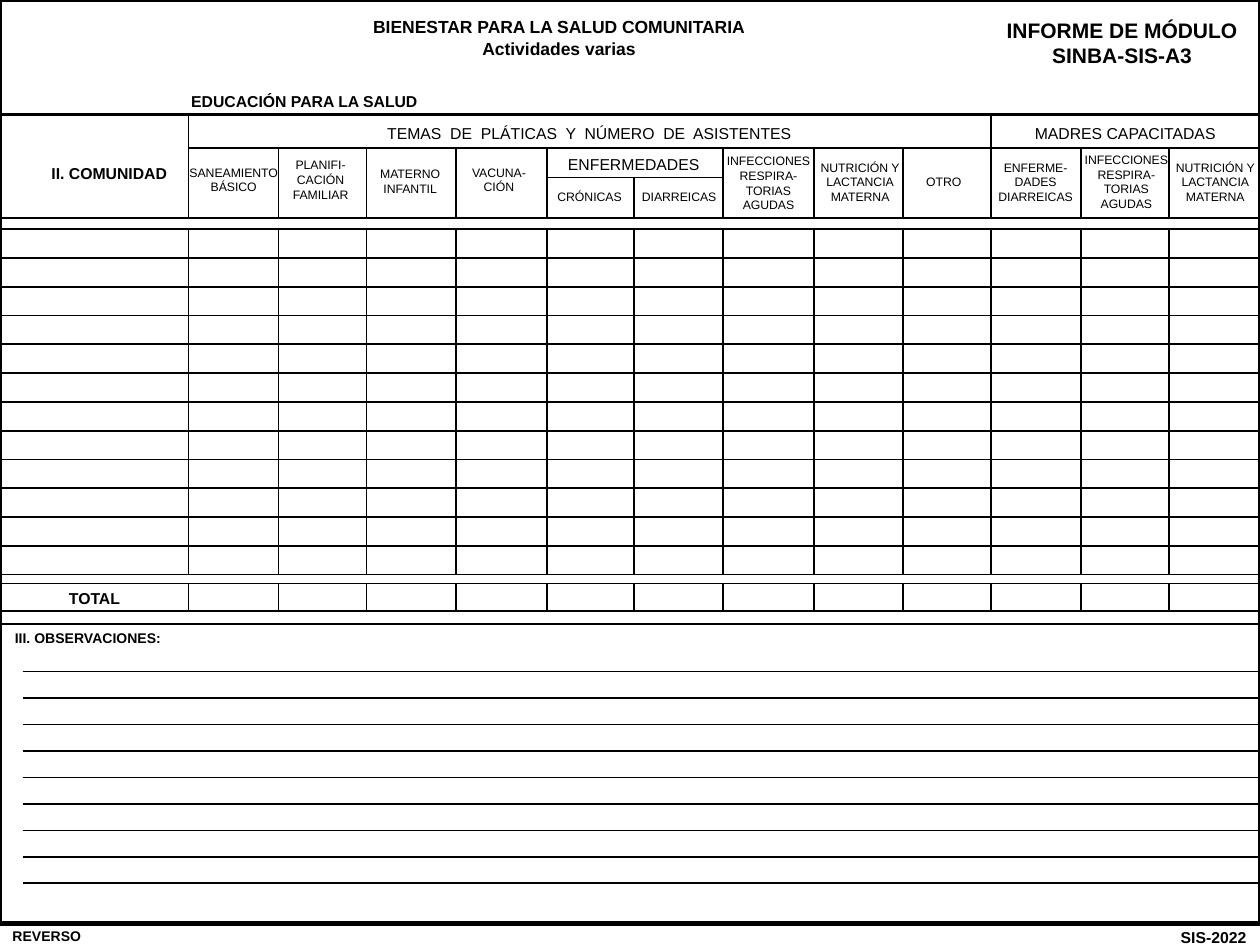
import pptx
import pptx.dml.color
import pptx.enum.shapes
import pptx.enum.text
import pptx.util
from pptx.oxml.ns import qn

Pt = pptx.util.Pt
ALIGN = {
    "l": pptx.enum.text.PP_ALIGN.LEFT,
    "c": pptx.enum.text.PP_ALIGN.CENTER,
    "r": pptx.enum.text.PP_ALIGN.RIGHT,
}


def color(value):
    return pptx.dml.color.RGBColor.from_string(value)


class Form:
    ink = "000000"
    font = "Arial"
    inset = 7.2

    def __init__(self, s):
        self.s = s

    def line(self, x1, y1, x2, y2, width=1):
        sp = self.s.shapes.add_connector(
            pptx.enum.shapes.MSO_CONNECTOR.STRAIGHT, Pt(x1), Pt(y1), Pt(x2), Pt(y2))
        sp.line.width = Pt(width)
        sp.line.color.rgb = color(self.ink)
        sp._element.spPr.append(sp._element.makeelement(qn("a:effectLst"), {}))

    def frame(self, x, y, w, h, width):
        sp = self.s.shapes.add_shape(
            pptx.enum.shapes.MSO_SHAPE.RECTANGLE, Pt(x), Pt(y), Pt(w), Pt(h))
        sp.shadow.inherit = False
        sp.fill.background()
        sp.line.width = Pt(width)
        sp.line.color.rgb = color(self.ink)

    def text(self, x, y, w, text, size, bold=False, align="c", wrap=True, left=inset):
        lines = text.split("\n")
        height = 1.2 * size * len(lines) + 7.2
        sp = self.s.shapes.add_textbox(Pt(x), Pt(y), Pt(w), Pt(height))
        self.fill_text(sp, lines, size, bold, align, wrap, left)

    def title(self, x, y, w, text, size):
        lines = text.split("\n")
        sp = self.s.shapes.title
        sp.left, sp.top, sp.width, sp.height = (
            Pt(v) for v in (x, y, w, 1.2 * size * len(lines) + 7.2))
        self.fill_text(sp, lines, size, True, "c", True, self.inset)

    def fill_text(self, sp, lines, size, bold, align, wrap, left):
        tf = sp.text_frame
        tf.text = "\n".join(lines)
        frame_format = {
            "word_wrap": wrap,
            "auto_size": pptx.enum.text.MSO_AUTO_SIZE.NONE,
            "vertical_anchor": pptx.enum.text.MSO_ANCHOR.TOP,
            "margin_left": Pt(left),
            "margin_right": Pt(self.inset),
            "margin_top": Pt(3.6),
            "margin_bottom": Pt(3.6),
        }
        for name, value in frame_format.items():
            setattr(tf, name, value)
        font_format = {"name": self.font, "size": Pt(size), "bold": bold}
        for p in tf.paragraphs:
            p.alignment = ALIGN[align]
            for r in p.runs:
                for name, value in font_format.items():
                    setattr(r.font, name, value)
                r.font.color.rgb = color(self.ink)


INFECTIONS = "INFECCIONES\nRESPIRA-\nTORIAS\nAGUDAS"
NUTRITION = "NUTRICIÓN Y\nLACTANCIA\nMATERNA"
COLUMN_LABELS = [
    (100.8, 90.7, 65.5, "SANEAMIENTO\nBÁSICO"),
    (159.8, 86.4, 46.8, "PLANIFI-\nCACIÓN\nFAMILIAR"),
    (209.5, 91.4, 49.7, "MATERNO\nINFANTIL"),
    (262.1, 90.7, 46.1, "VACUNA-\nCIÓN"),
    (311, 104.4, 51.8, "CRÓNICAS"),
    (359.3, 104.4, 57.6, "DIARREICAS"),
    (408.2, 84.2, 61.9, INFECTIONS),
    (459.4, 87.8, 64.1, NUTRITION),
    (522, 95.8, 34.6, "OTRO"),
    (563, 87.8, 57.6, "ENFERME-\nDADES\nDIARREICAS"),
    (612.7, 83.5, 61.9, INFECTIONS),
    (662.4, 87.8, 64.1, NUTRITION),
]
COLUMNS = [107.8, 159.1, 209.5, 260.6, 312.5, 362.2,
           413.3, 465.1, 516.2, 566.1, 617.8, 668.2]
COMMUNITY, CHRONIC, DISEASE_END, MOTHERS = (COLUMNS[i] for i in (0, 4, 6, 9))
DISEASE_SPLIT = COLUMNS[5]
WIDTH = 720
HEADER_TOP, TOPICS_BOTTOM, DISEASE_BOTTOM, HEADER_BOTTOM = 65.5, 84.4, 101.5, 124.5
ROWS_TOP, ROWS_BOTTOM, ROW_COUNT = 131, 328.3, 12
TOTAL_TOP, TOTAL_BOTTOM = 333.4, 349.2
NOTES_TOP = 356.4


def main():
    prs = pptx.Presentation()
    prs.slide_width, prs.slide_height = Pt(WIDTH), Pt(540)
    form = Form(prs.slides.add_slide(prs.slide_layouts[5]))

    form.frame(0, 0, WIDTH, 527.8, 2.5)
    form.title(74.2, 5.8, 490.3, "BIENESTAR PARA LA SALUD COMUNITARIA\nActividades varias", 10)
    form.text(556.6, 6.5, 169.2, "INFORME DE MÓDULO\nSINBA-SIS-A3", 12, True)
    form.text(102.2, 49, 146.2, "EDUCACIÓN PARA LA SALUD", 9, True, "l", False)

    form.line(0, HEADER_TOP, WIDTH, HEADER_TOP, 2)
    form.line(COMMUNITY, TOPICS_BOTTOM, WIDTH, TOPICS_BOTTOM)
    form.line(CHRONIC, DISEASE_BOTTOM, DISEASE_END, DISEASE_BOTTOM)
    starts = {COMMUNITY: HEADER_TOP, MOTHERS: HEADER_TOP, DISEASE_SPLIT: DISEASE_BOTTOM}
    for x in COLUMNS:
        form.line(x, starts.get(x, TOPICS_BOTTOM), x, HEADER_BOTTOM)
        form.line(x, ROWS_TOP, x, ROWS_BOTTOM)
        form.line(x, TOTAL_TOP, x, TOTAL_BOTTOM)

    row_height = (ROWS_BOTTOM - ROWS_TOP) / ROW_COUNT
    row_lines = [ROWS_TOP + i * row_height for i in range(ROW_COUNT + 1)]
    for y in [HEADER_BOTTOM, *row_lines, TOTAL_TOP, TOTAL_BOTTOM, NOTES_TOP]:
        form.line(0, y, WIDTH, y)
    for i in range(9):
        y = 383.8 + i * 15.12
        form.line(13, y, 719.3, y)

    form.text(0, 90, 107.3, "II. COMUNIDAD", 9, True, left=24.5)
    form.text(108, 67, 457.2, "TEMAS  DE  PLÁTICAS  Y  NÚMERO  DE  ASISTENTES", 9)
    form.text(565.9, 67, 154.1, "MADRES CAPACITADAS", 9)
    form.text(317.5, 85, 89.3, "ENFERMEDADES", 9, align="l", wrap=False)
    for x, y, w, label in COLUMN_LABELS:
        form.text(x, y, w, label, 7, wrap=False)

    form.text(0, 332.6, 108, "TOTAL", 9, True)
    form.text(1.4, 356.4, 98.6, "III. OBSERVACIONES:", 8, True, "l", False)
    form.text(0, 526.3, 63.4, "REVERSO", 8, True, "l")
    form.text(646.6, 526.3, 72.7, "SIS-2022", 9, True, "r")

    prs.save("out.pptx")


if __name__ == "__main__":
    main()
